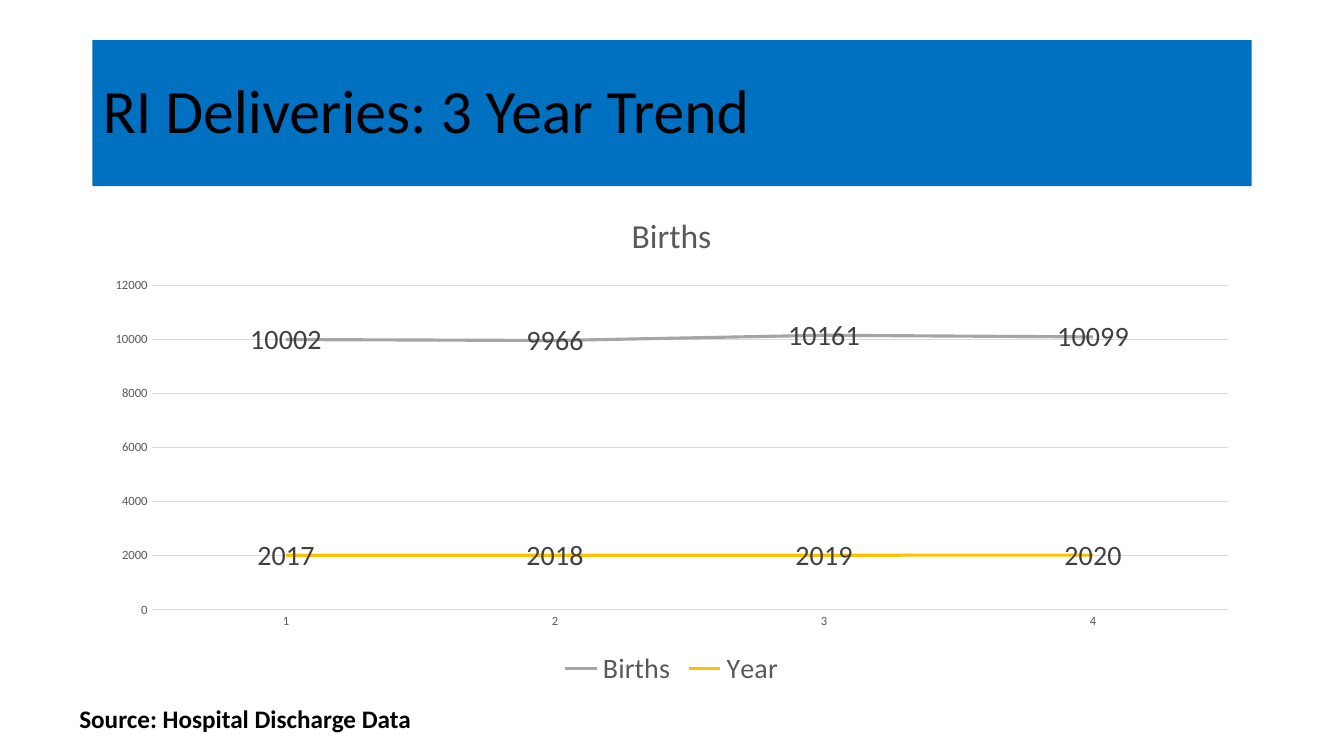
from pptx import Presentation
from pptx.chart.data import CategoryChartData
from pptx.dml.color import RGBColor
from pptx.enum.chart import XL_CHART_TYPE, XL_LABEL_POSITION, XL_LEGEND_POSITION, XL_MARKER_STYLE, XL_TICK_MARK
from pptx.enum.text import MSO_ANCHOR, PP_ALIGN
from pptx.util import Cm, Pt

BLACK = RGBColor(0x00, 0x00, 0x00)
BLUE = RGBColor(0x00, 0x70, 0xC0)
GRAY = RGBColor(0xA5, 0xA5, 0xA5)
GOLD = RGBColor(0xFF, 0xC0, 0x00)
GRID = RGBColor(0xD9, 0xD9, 0xD9)
AXIS_TEXT = RGBColor(0x59, 0x59, 0x59)
LABEL_TEXT = RGBColor(0x40, 0x40, 0x40)
FONT = "Calibri"

TITLE = "RI Deliveries: 3 Year Trend"
CHART_TITLE = "Births"
SOURCE = "Source: Hospital Discharge Data"
CATEGORIES = ["1", "2", "3", "4"]
SERIES = [
    ("Births", [10002, 9966, 10161, 10099], GRAY),
    ("Year", [2017, 2018, 2019, 2020], GOLD),
]


def style_font(font, size, color, bold=False):
    """Apply the slide typeface with a size, colour and weight."""
    font.name = FONT
    font.size = Pt(size)
    font.bold = bold
    font.color.rgb = color


def write_text(tf, text, size=18, color=BLACK, bold=False, spacing=1.0, align=PP_ALIGN.LEFT):
    """Write one formatted paragraph into a text frame."""
    p = tf.paragraphs[0]
    p.alignment = align
    p.line_spacing = spacing
    r = p.add_run()
    r.text = text
    style_font(r.font, size, color, bold)


def style_line(line, color, width):
    """Give a line a solid colour and a width."""
    line.color.rgb = color
    line.width = Pt(width)


def add_trend_chart(s):
    """Add the line chart of births and years."""
    data = CategoryChartData()
    data.categories = CATEGORIES
    for name, values, _ in SERIES:
        data.add_series(name, values)
    chart = s.shapes.add_chart(
        XL_CHART_TYPE.LINE, Cm(2.33), Cm(4.83), Cm(29.19), Cm(12.6), data
    ).chart
    style_font(chart.font, 10, BLACK)
    chart.has_title = True
    write_text(chart.chart_title.text_frame, CHART_TITLE, size=24,
               color=AXIS_TEXT, align=PP_ALIGN.CENTER)
    chart.chart_title.include_in_layout = False

    chart.has_legend = True
    chart.legend.position = XL_LEGEND_POSITION.BOTTOM
    chart.legend.include_in_layout = False
    style_font(chart.legend.font, 20, AXIS_TEXT)

    for axis in (chart.category_axis, chart.value_axis):
        axis.major_tick_mark = XL_TICK_MARK.NONE
        axis.minor_tick_mark = XL_TICK_MARK.NONE
        style_font(axis.tick_labels.font, 9, AXIS_TEXT)
    style_line(chart.category_axis.format.line, GRID, 0.75)
    chart.value_axis.format.line.fill.background()
    style_line(chart.value_axis.major_gridlines.format.line, GRID, 0.75)

    plot = chart.plots[0]
    plot.vary_by_categories = False
    for series, (_, _, color) in zip(plot.series, SERIES):
        series.smooth = False
        series.marker.style = XL_MARKER_STYLE.NONE
        style_line(series.format.line, color, 2.25)
        labels = series.data_labels
        labels.show_value = True
        labels.position = XL_LABEL_POSITION.CENTER
        style_font(labels.font, 20, LABEL_TEXT)


def main():
    """Build and save the slide."""
    prs = Presentation()
    prs.slide_width, prs.slide_height = Cm(33.87), Cm(19.05)
    s = prs.slides.add_slide(prs.slide_layouts[5])

    title = s.shapes.title
    title.left, title.top, title.width, title.height = Cm(2.33), Cm(1.01), Cm(29.21), Cm(3.68)
    title.fill.solid()
    title.fill.fore_color.rgb = BLUE
    title.text_frame.vertical_anchor = MSO_ANCHOR.MIDDLE
    write_text(title.text_frame, TITLE, size=44, spacing=0.9)

    add_trend_chart(s)

    tf = s.shapes.add_textbox(Cm(1.75), Cm(17.6), Cm(18.4), Cm(1.03)).text_frame
    tf.word_wrap = True
    write_text(tf, SOURCE, bold=True)

    prs.save("out.pptx")


if __name__ == "__main__":
    main()
